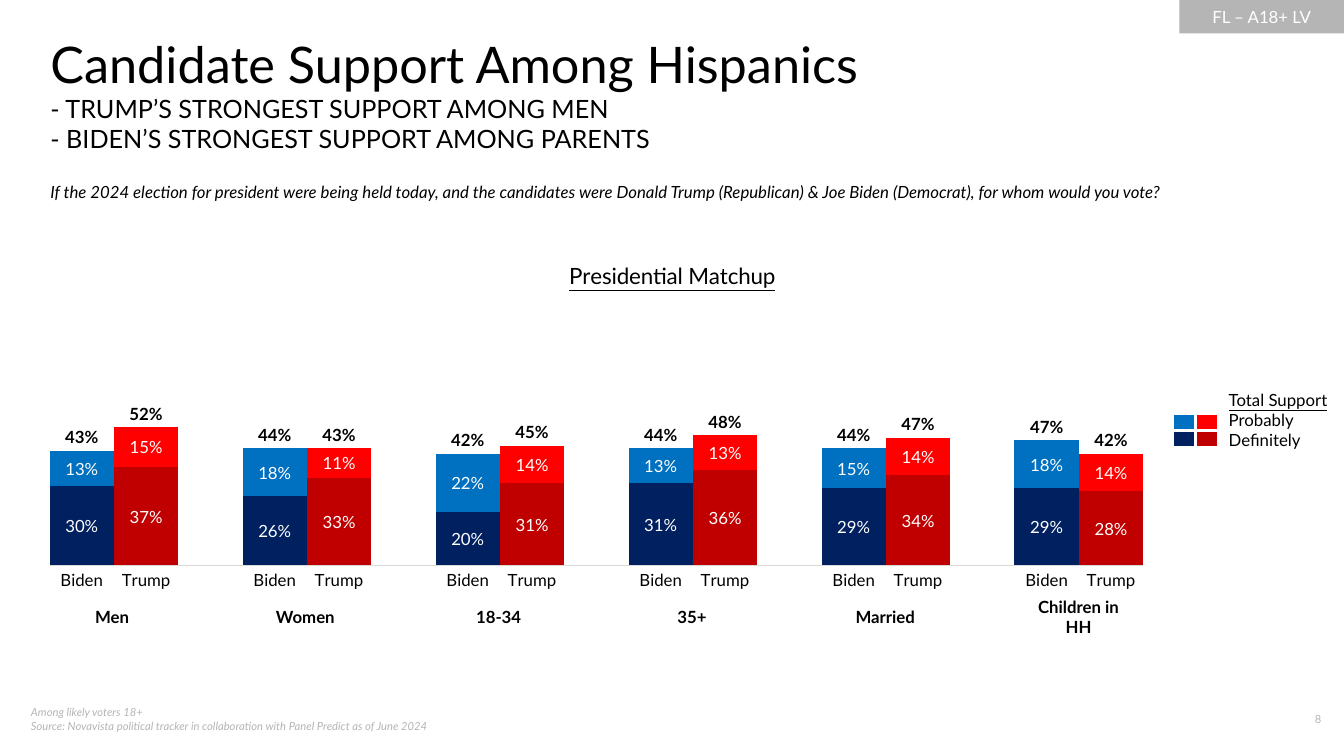
from lxml import etree
from pptx import Presentation
from pptx.chart.data import CategoryChartData
from pptx.dml.color import RGBColor
from pptx.enum.chart import XL_CHART_TYPE, XL_LABEL_POSITION, XL_TICK_LABEL_POSITION, XL_TICK_MARK
from pptx.enum.shapes import MSO_SHAPE
from pptx.enum.text import MSO_ANCHOR, PP_ALIGN
from pptx.oxml.ns import qn
from pptx.util import Pt

STACKED = XL_CHART_TYPE.COLUMN_STACKED
CENTER_LABEL, BASE_LABEL = XL_LABEL_POSITION.CENTER, XL_LABEL_POSITION.INSIDE_BASE
NO_TICK, NEXT_TO_AXIS = XL_TICK_MARK.NONE, XL_TICK_LABEL_POSITION.NEXT_TO_AXIS
RECTANGLE = MSO_SHAPE.RECTANGLE
TOP, MIDDLE = MSO_ANCHOR.TOP, MSO_ANCHOR.MIDDLE
LEFT, CENTER, RIGHT = PP_ALIGN.LEFT, PP_ALIGN.CENTER, PP_ALIGN.RIGHT
FONT = "Lato"
NO_GRID_STYLE = "{2D5ABB26-0587-4C30-8999-92F81FD0307C}"
COLORS = {
    "black": "000000", "white": "FFFFFF", "gray": "B5B5B5", "axis": "D9D9D9",
    "biden definitely": "002060", "biden probably": "0070C0",
    "trump definitely": "C00000", "trump probably": "FF0000",
}
CANDIDATES = ("Biden", "Trump")
# Per group: (definitely, probably, total) for each candidate
SUPPORT = {
    "Men": ((0.30, 0.13, 0.43), (0.37, 0.15, 0.52)),
    "Women": ((0.26, 0.18, 0.44), (0.33, 0.11, 0.43)),
    "18-34": ((0.20, 0.22, 0.42), (0.31, 0.14, 0.45)),
    "35+": ((0.31, 0.13, 0.44), (0.36, 0.13, 0.48)),
    "Married": ((0.29, 0.15, 0.44), (0.34, 0.14, 0.47)),
    "Children in HH": ((0.29, 0.18, 0.47), (0.28, 0.14, 0.42)),
}
LEVELS = ("Definitely", "Probably", "Total Support")


def color(name):
    return RGBColor.from_string(COLORS[name])


def style_font(font, size, name="black", bold=False, italic=False, underline=False):
    font.name, font.size = FONT, Pt(size)
    font.bold, font.italic, font.underline = bold, italic, underline
    font.color.rgb = color(name)


def write(frame, lines, align=LEFT, anchor=TOP, inset=None):
    """Fill a text frame with (text, font settings) lines."""
    frame.word_wrap = True
    frame.vertical_anchor = anchor
    if inset is not None:
        frame.margin_left = frame.margin_right = Pt(inset)
        frame.margin_top = frame.margin_bottom = Pt(inset)
    for index, (text, settings) in enumerate(lines):
        para = frame.add_paragraph() if index else frame.paragraphs[0]
        para.text = text
        para.alignment = align
        style_font(para.font, **settings)


def add_text(page, box, lines, **layout):
    shape = page.shapes.add_textbox(*map(Pt, box))
    write(shape.text_frame, lines, **layout)


def add_tag(page, box):
    tag = page.shapes.add_shape(RECTANGLE, *map(Pt, box))
    tag.shadow.inherit = False
    tag.fill.solid()
    tag.fill.fore_color.rgb = color("gray")
    tag.line.fill.background()
    write(tag.text_frame, [("FL – A18+ LV", {"size": 12, "name": "white"})], CENTER, MIDDLE)


def add_heading(page, box):
    title = page.shapes.title
    title.left, title.top, title.width, title.height = map(Pt, box)
    write(title.text_frame, [
        ("Candidate Support Among Hispanics", {"size": 36}),
        ("- TRUMP’S STRONGEST SUPPORT AMONG MEN", {"size": 18}),
        ("- BIDEN’S STRONGEST SUPPORT AMONG PARENTS", {"size": 18}),
    ], inset=0)


def add_footer(page, box):
    left, top, width, height = box
    note = {"size": 8, "name": "gray", "italic": True}
    add_text(page, (left, top, 368, height), [
        ("Among likely voters 18+", note),
        ("Source: Novavista political tracker in collaboration with Panel Predict as of June 2024", note),
    ])
    add_text(page, (left + width - 63, top + 5, 63, 19.5),
             [("8", {"size": 8, "name": "gray"})], align=RIGHT)


def add_plain_table(page, box, rows, widths):
    left, top, width, height = map(Pt, box)
    table = page.shapes.add_table(rows, len(widths), left, top, width, height).table
    table.first_row = table.horz_banding = False
    table._tbl.tblPr.find(qn("a:tableStyleId")).text = NO_GRID_STYLE
    for column, column_width in zip(table.columns, widths):
        column.width = Pt(column_width)
    for cell in table.iter_cells():
        cell.fill.background()
    return table


def add_white_borders(cell, width):
    properties = cell._tc.get_or_add_tcPr()
    for index, side in enumerate(("lnL", "lnR", "lnT", "lnB")):
        line = etree.Element(qn(f"a:{side}"), w=str(Pt(width)))
        fill = etree.SubElement(line, qn("a:solidFill"))
        etree.SubElement(fill, qn("a:srgbClr"), val=COLORS["white"])
        properties.insert(index, line)


def add_legend(page, box):
    left, top, width, height = box
    swatch = 16.6
    add_text(page, (left + 2 * swatch, top, width - 2 * swatch, height), [
        ("Total Support", {"size": 12, "underline": True}),
        ("Probably", {"size": 12}),
        ("Definitely", {"size": 12}),
    ], anchor=MIDDLE)
    table = add_plain_table(page, (left, top + 25.2, 2 * swatch, 24.5), 2, (swatch, swatch))
    for row, level in enumerate(("probably", "definitely")):
        for column, candidate in enumerate(("biden", "trump")):
            cell = table.cell(row, column)
            cell.fill.solid()
            cell.fill.fore_color.rgb = color(f"{candidate} {level}")
            cell.margin_left = cell.margin_right = cell.margin_top = cell.margin_bottom = 0
            # Small empty text keeps the row low
            cell.text_frame.paragraphs[0]._p.get_or_add_endParaRPr().set("sz", "400")
            add_white_borders(cell, 3)


def set_layout(parent, index, **values):
    """Place a chart part at fractions of the chart area."""
    layout = parent.find(qn("c:layout"))
    if layout is None:
        layout = etree.Element(qn("c:layout"))
        parent.insert(index, layout)
    manual = etree.SubElement(layout, qn("c:manualLayout"))
    for name, value in values.items():
        etree.SubElement(manual, qn(f"c:{name}"), val=str(value))


def chart_data():
    data = CategoryChartData(number_format="0%")
    categories, columns = [], []
    for pair in SUPPORT.values():
        if categories:
            categories.append(" ")
            columns.append((None,) * len(LEVELS))
        categories.extend(CANDIDATES)
        columns.extend(pair)
    data.categories = categories
    for level, values in zip(LEVELS, zip(*columns)):
        data.add_series(level, values)
    return data


def add_support_chart(page, box):
    chart = page.shapes.add_chart(STACKED, *map(Pt, box), chart_data()).chart
    style_font(chart.font, 10)
    chart.has_legend = False

    # Title and plot area
    chart.has_title = True
    title_frame = chart.chart_title.text_frame
    title_frame.text = "Presidential Matchup"
    style_font(title_frame.paragraphs[0].font, 16, underline=True)
    set_layout(chart.chart_title._element, 1, xMode="edge", yMode="edge", x=0.416, y=0.036)
    set_layout(chart._chartSpace.chart.plotArea, 0, layoutTarget="inner", xMode="edge",
               yMode="edge", x=0.012, y=0.157, w=0.857, h=0.737)

    # Axes
    values, names = chart.value_axis, chart.category_axis
    values.minimum_scale, values.maximum_scale = 0, 1
    values.has_major_gridlines = False
    values.visible = False
    names.major_tick_mark = names.minor_tick_mark = NO_TICK
    names.tick_label_position = NEXT_TO_AXIS
    names.format.line.color.rgb = color("axis")
    names.format.line.width = Pt(0.75)
    style_font(names.tick_labels.font, 12)
    names.tick_labels.offset = 0

    # Columns and labels
    plot = chart.plots[0]
    plot.gap_width, plot.overlap = 0, 100
    plot.vary_by_categories = False
    for level, series in zip(LEVELS, plot.series):
        is_total = level == "Total Support"
        labels = series.data_labels
        labels.show_value = True
        labels.number_format, labels.number_format_is_linked = "0%", False
        labels.position = BASE_LABEL if is_total else CENTER_LABEL
        style_font(labels.font, 12, "black" if is_total else "white", bold=is_total)
        if is_total:
            series.format.fill.background()
            continue
        for group in range(len(SUPPORT)):
            for offset, candidate in enumerate(CANDIDATES):
                fill = series.points[3 * group + offset].format.fill
                fill.solid()
                fill.fore_color.rgb = color(f"{candidate} {level}".lower())


def add_group_names(page, box):
    name_width, gap = 92.1, 46
    widths = ([name_width, gap] * len(SUPPORT))[:-1]
    table = add_plain_table(page, box, 1, widths)
    for index, group in enumerate(SUPPORT):
        cell = table.cell(0, 2 * index)
        write(cell.text_frame, [(group, {"size": 12, "bold": True})], CENTER)
        cell.vertical_anchor = MIDDLE


def build_slide(deck):
    page = deck.slides.add_slide(deck.slide_layouts[5])
    add_tag(page, (842.4, 0, 117.6, 23.8))
    add_footer(page, (15, 500.4, 936, 29))
    add_heading(page, (36, 23.5, 864, 87))
    add_text(page, (36, 129.6, 864, 29), [(
        "If the 2024 election for president were being held today, and the candidates were "
        "Donald Trump (Republican) & Joe Biden (Democrat), for whom would you vote?",
        {"size": 12, "italic": True})], inset=0)
    add_legend(page, (837.4, 270, 122.6, 60))
    add_support_chart(page, (24.5, 173.5, 911.5, 257.8))
    add_group_names(page, (34, 422.6, 782.6, 29.5))


def main():
    deck = Presentation()
    deck.slide_width, deck.slide_height = Pt(960), Pt(540)
    build_slide(deck)
    deck.save("out.pptx")


if __name__ == "__main__":
    main()
